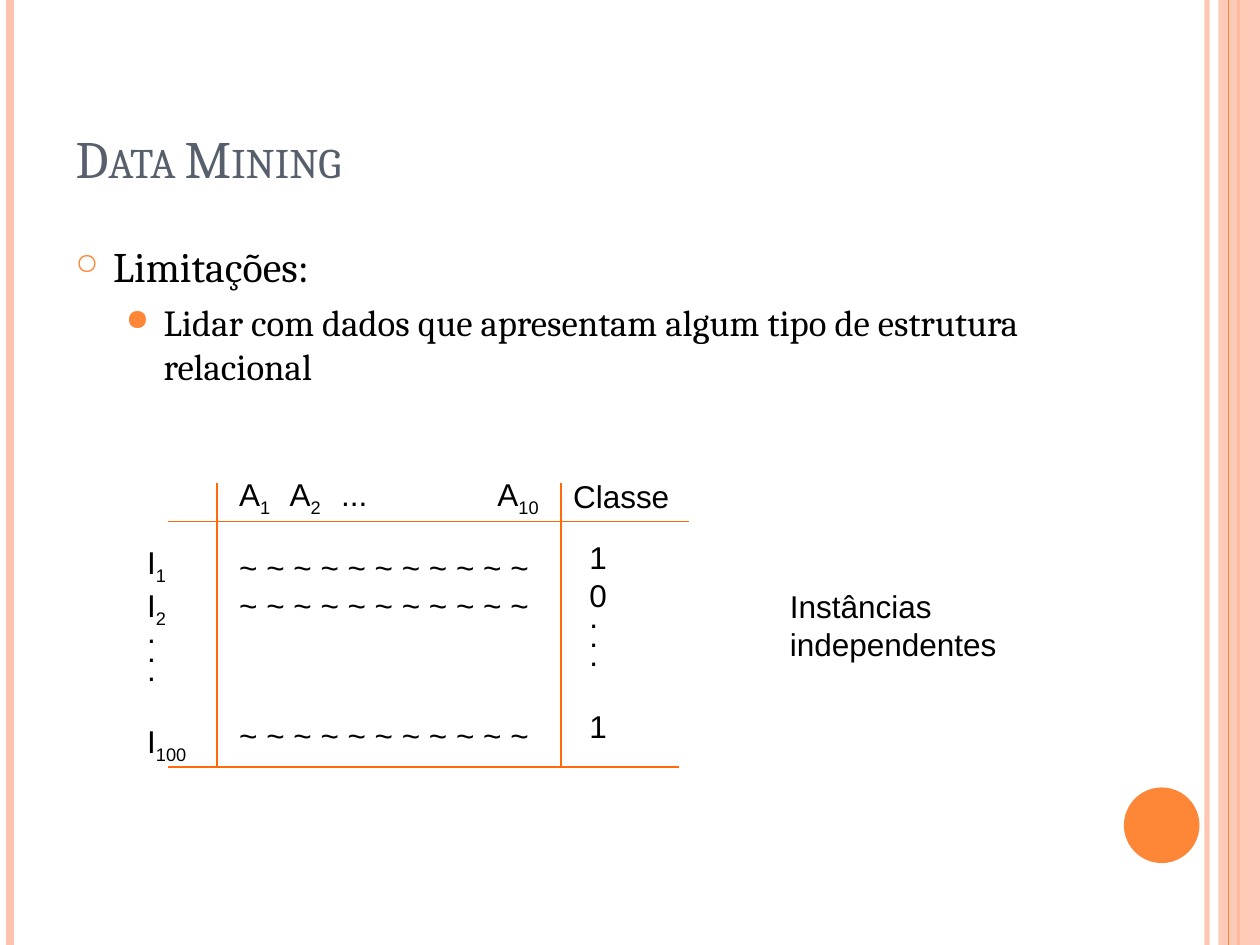
"""Build the Data Mining slide about the limits of relational data."""
from dataclasses import dataclass

from lxml import etree
from pptx import Presentation
from pptx import util as u
from pptx.dml.color import RGBColor
from pptx.enum import shapes, text
from pptx.oxml import ns


@dataclass(frozen=True)
class Theme:
    orange: str = "FE8637"
    peach: str = "FEC3AE"
    grid: str = "FF6B0A"
    slate: str = "575F6D"
    black: str = "000000"
    serif: str = "Cambria"
    sans: str = "Arial"
    title: int = 30
    lead: int = 24
    detail: int = 21
    label: int = 18


THEME = Theme()


def add_child(parent, tag, **attributes):
    child = etree.SubElement(parent, ns.qn(tag))
    for name, value in attributes.items():
        child.set(name, str(value))
    return child


def set_opacity(element, percent):
    color = next(element.iter(ns.qn("a:srgbClr")))
    add_child(color, "a:alpha", val=percent * 1000)


def add_line(page, start, end, color, width, opacity=100):
    ends = [u.Inches(value) for value in (*start, *end)]
    line = page.shapes.add_connector(shapes.MSO_CONNECTOR.STRAIGHT, *ends)
    line.line.color.rgb = RGBColor.from_string(color)
    line.line.width = u.Pt(width)
    properties = line._element.spPr
    if opacity < 100:
        set_opacity(properties, opacity)
    add_child(properties, "a:effectLst")


def add_block(page, kind, box, color, opacity=100):
    block = page.shapes.add_shape(kind, *map(u.Inches, box))
    block.shadow.inherit = False
    block.fill.solid()
    block.fill.fore_color.rgb = RGBColor.from_string(color)
    block.line.fill.background()
    if opacity < 100:
        set_opacity(block._element.spPr, opacity)


def add_frame(page, box, wrap=True):
    frame = page.shapes.add_textbox(*map(u.Inches, box)).text_frame
    frame.word_wrap = wrap
    return frame


def write_para(frame, content, size=THEME.label, font=THEME.sans, color=THEME.black,
               small_caps=False, spacing=None, before=None, tabs=()):
    """Write a paragraph in which every second part between bars is a subscript."""
    para = frame.paragraphs[0]
    if para.runs:
        para = frame.add_paragraph()
    para.alignment = text.PP_ALIGN.LEFT
    if spacing is not None:
        para.line_spacing = spacing
    if before is not None:
        para.space_before = u.Pt(before)
    for index, part in enumerate(content.split("|")):
        span = para.add_run()
        span.text = part
        span.font.size = u.Pt(size)
        span.font.name = font
        span.font.color.rgb = RGBColor.from_string(color)
        if index % 2:
            span._r.get_or_add_rPr().set("baseline", "-25000")
        if small_caps:
            span._r.get_or_add_rPr().set("cap", "small")
    if tabs:
        stops = add_child(para._p.get_or_add_pPr(), "a:tabLst")
        for stop in tabs:
            add_child(stops, "a:tab", pos=u.Inches(stop), algn="l")
    return para


def add_bullet(para, symbol, percent, indent):
    properties = para._p.get_or_add_pPr()
    properties.set("marL", str(u.Inches(indent)))
    properties.set("indent", str(u.Inches(-0.3)))
    color = add_child(properties, "a:buClr")
    add_child(color, "a:srgbClr", val=THEME.orange)
    add_child(properties, "a:buSzPct", val=percent * 1000)
    add_child(properties, "a:buChar", char=symbol)


def add_decoration(page, height):
    def stripe(x, color, width, opacity=100):
        add_line(page, (x, 0), (x, height), color, width, opacity)

    stripe(9.58, THEME.peach, 3, 93)
    stripe(0.08, THEME.peach, 4.5)
    stripe(9.83, THEME.orange, 1.5)
    add_block(page, shapes.MSO_SHAPE.RECTANGLE, (9.67, 0, 0.33, height), THEME.peach, 87)
    stripe(9.75, THEME.orange, 0.75)
    add_block(page, shapes.MSO_SHAPE.OVAL, (8.92, 6.25, 0.6, 0.6), THEME.orange)


def add_title(page, content):
    title = page.shapes.title
    title.left, title.top, title.width, title.height = map(u.Inches, (0.5, 0.3, 8.17, 1.25))
    title.text_frame.vertical_anchor = text.MSO_ANCHOR.BOTTOM
    write_para(title.text_frame, content, size=THEME.title, font=THEME.serif,
               color=THEME.slate, small_caps=True)


def add_body(page):
    frame = add_frame(page, (0.5, 1.86, 8.17, 5.33))
    lead = write_para(frame, "Limitações:", size=THEME.lead, font=THEME.serif, before=6)
    add_bullet(lead, "○", 70, 0.3)
    detail = write_para(frame, "Lidar com dados que apresentam algum tipo de estrutura relacional",
                        size=THEME.detail, font=THEME.serif, before=5)
    detail.level = 1
    add_bullet(detail, "●", 80, 0.7)


def add_column(page, box, first, second, last):
    """Write a column whose middle rows are three tight dots."""
    frame = add_frame(page, box, wrap=False)
    for content in (first, second):
        write_para(frame, content)
    for _ in range(3):
        write_para(frame, ".", spacing=0.5)
    write_para(frame, last, before=21)


def add_instance_grid(page):
    top, header, bottom = 3.83, 4.14, 6.09
    left = 1.33
    for x in (1.72, 4.45):
        add_line(page, (x, top), (x, bottom), THEME.grid, 1)
    for y, right in ((header, 5.47), (bottom, 5.39)):
        add_line(page, (left, y), (right, y), THEME.grid, 1)
    add_column(page, (1.07, 4.26, 0.55, 2.07), "I|1", "I|2", "I|100")
    add_column(page, (4.58, 4.22, 0.34, 2.07), "1", "0", "1")
    write_para(add_frame(page, (4.45, 3.74, 0.97, 0.4), wrap=False), "Classe")
    write_para(add_frame(page, (1.8, 3.72, 2.7, 0.4)), "A|1|\tA|2|\t...\tA|10",
               tabs=(0.4, 0.81, 2.05))
    for y in (4.3, 4.6, 5.63):
        write_para(add_frame(page, (1.8, y, 2.59, 0.4), wrap=False), " ".join("~" * 11))


def main():
    deck = Presentation()
    deck.slide_width, deck.slide_height = u.Inches(10), u.Inches(7.5)
    page = deck.slides.add_slide(deck.slide_layouts.get_by_name("Title Only"))
    add_decoration(page, 7.5)
    add_title(page, "Data Mining")
    add_body(page)
    add_instance_grid(page)
    write_para(add_frame(page, (6.17, 4.61, 2.58, 0.71)), "Instâncias independentes")
    deck.save("out.pptx")


if __name__ == "__main__":
    main()
